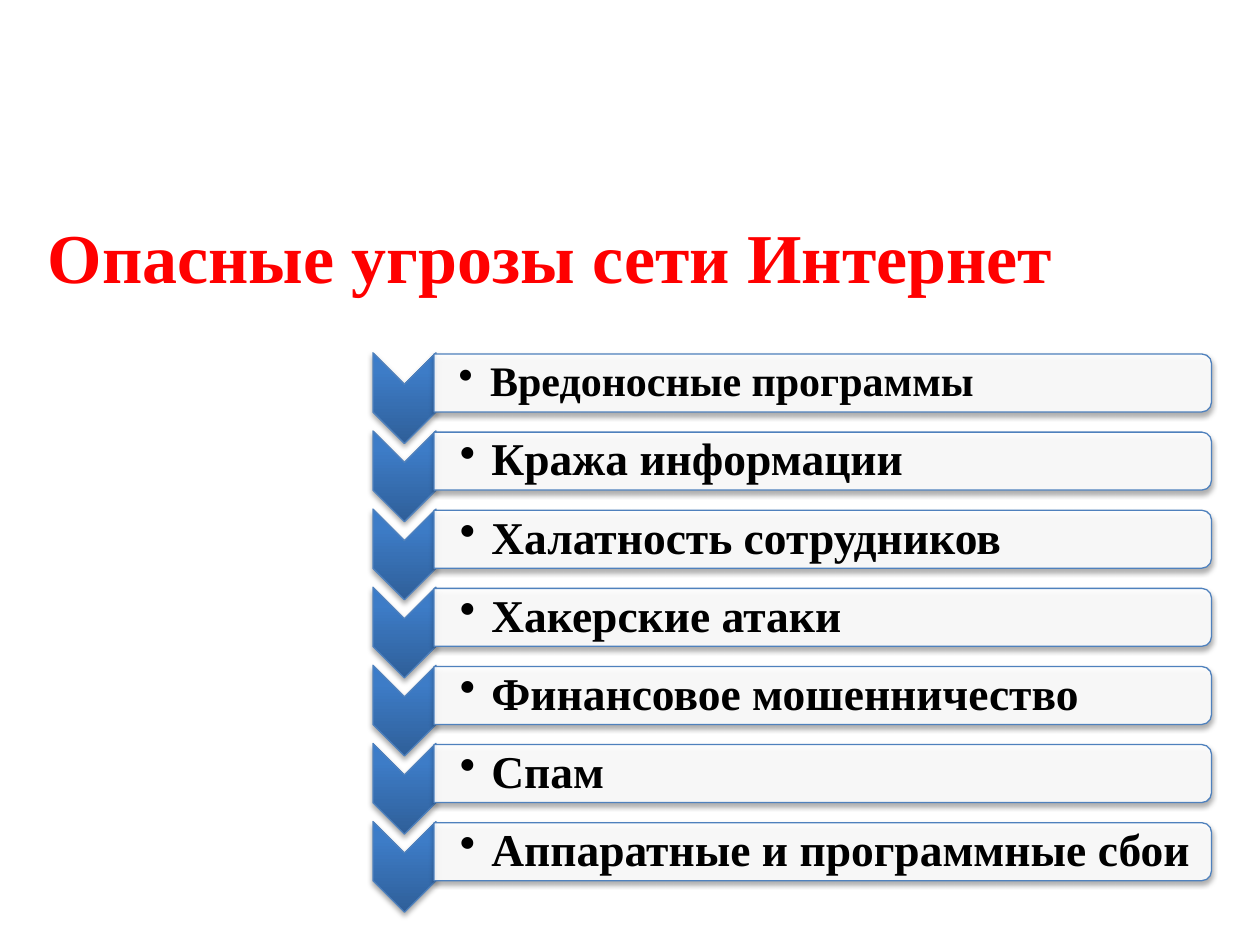
from lxml.etree import fromstring
from pptx import Presentation
from pptx.dml.color import RGBColor
from pptx.enum.shapes import MSO_SHAPE
from pptx.enum.text import MSO_ANCHOR, PP_ALIGN
from pptx.oxml.ns import nsdecls
from pptx.util import Inches, Pt

TITLE = "Опасные угрозы сети Интернет"
THREATS = [
    ("Вредоносные программы", 24),
    ("Кража информации", 26),
    ("Халатность сотрудников", 26),
    ("Хакерские атаки", 26),
    ("Финансовое мошенничество", 26),
    ("Спам", 26),
    ("Аппаратные и программные сбои", 26),
]
THEME = {
    "font": "Times New Roman",
    "title": "FF0000",
    "text": "000000",
    "line": "4F81BD",
    "bar": "FFFFFF",
    "grad": [(0, "2F5F99"), (80, "3D7CC7"), (100, "3A7CCB")],
    "head": 40,
}
PITCH = 0.62
ARROW = {"x": 3.21, "y": 3.16, "w": 0.72, "h": 0.5}
BAR = {"x": 6.53, "y": 3.04, "w": 0.46, "h": 6.17}
LABEL = {"x": 6.52, "y": 3.04, "w": 6.14, "h": 0.42}


def xml(tag, body, attrs=""):
    return fromstring(f"<a:{tag} {nsdecls('a')} {attrs}>{body}</a:{tag}>")


def assign(obj, values):
    for name, value in values.items():
        setattr(obj, name, value)


def style(font, size, color):
    assign(font, {"name": THEME["font"], "size": Pt(size), "bold": True})
    font.color.rgb = RGBColor.from_string(color)


def place(box, row):
    """Turn a centre and size into left, top, width and height for one row."""
    left = box["x"] - box["w"] / 2
    top = box["y"] - box["h"] / 2 + row * PITCH
    return [Inches(v) for v in (left, top, box["w"], box["h"])]


def turned(slide, kind, box, row):
    """Add a preset shape turned a quarter, with thin outline and soft shadow."""
    shape = slide.shapes.add_shape(kind, *place(box, row))
    shape.rotation = 90
    shape.line.color.rgb = RGBColor.from_string(THEME["line"])
    shape.line.width = Pt(0.75)
    shade = ('<a:outerShdw blurRad="40000" dist="23000" dir="5400000" rotWithShape="0">'
             '<a:srgbClr val="000000"><a:alpha val="35000"/></a:srgbClr></a:outerShdw>')
    shape._element.spPr.append(xml("effectLst", shade))
    return shape


def arrow(slide, row):
    shape = turned(slide, MSO_SHAPE.CHEVRON, ARROW, row)
    stops = "".join(f'<a:gs pos="{pos * 1000}"><a:srgbClr val="{color}"/></a:gs>'
                    for pos, color in THEME["grad"])
    body = f'<a:gsLst>{stops}</a:gsLst><a:lin ang="16200000" scaled="0"/>'
    shape._element.spPr.prstGeom.addnext(xml("gradFill", body, 'rotWithShape="0"'))


def bar(slide, row):
    shape = turned(slide, MSO_SHAPE.ROUND_2_SAME_RECTANGLE, BAR, row)
    shape.fill.solid()
    shape.fill.fore_color.rgb = RGBColor.from_string(THEME["bar"])
    tint = shape._element.spPr.find(".//{*}solidFill/{*}srgbClr")
    tint.append(xml("alpha", "", 'val="90000"'))


def label(slide, row, text, size):
    frame = slide.shapes.add_textbox(*place(LABEL, row)).text_frame
    edge = Inches(0.02)
    assign(frame, {
        "word_wrap": True, "vertical_anchor": MSO_ANCHOR.MIDDLE,
        "margin_left": Inches(0.19 if size < 26 else 0.2),
        "margin_right": edge, "margin_top": edge, "margin_bottom": edge,
    })
    para = frame.paragraphs[0]
    assign(para, {"level": 1, "line_spacing": 0.9, "alignment": PP_ALIGN.LEFT})
    props = para._p.get_or_add_pPr()
    props.set("marL", str(Inches(0.25)))
    props.set("indent", str(Inches(-0.25)))
    props.append(xml("spcAft", '<a:spcPct val="15000"/>'))
    props.append(xml("buChar", "", 'char="•"'))
    run = para.add_run()
    run.text = text
    style(run.font, size, THEME["text"])


def heading(slide):
    title = slide.shapes.title
    assign(title, {"left": Inches(-0.28), "top": Inches(1.62),
                   "width": Inches(9.29), "height": Inches(0.79)})
    frame = title.text_frame
    assign(frame, {"word_wrap": True, "vertical_anchor": MSO_ANCHOR.BOTTOM})
    para = frame.paragraphs[0]
    para.alignment = PP_ALIGN.CENTER
    run = para.add_run()
    run.text = TITLE
    style(run.font, THEME["head"], THEME["title"])


def main():
    deck = Presentation()
    assign(deck, {"slide_width": Inches(10), "slide_height": Inches(7.5)})
    slide = deck.slides.add_slide(deck.slide_layouts[5])
    heading(slide)
    for row, (text, size) in enumerate(THREATS):
        arrow(slide, row)
        bar(slide, row)
        label(slide, row, text, size)
    deck.save("out.pptx")


if __name__ == "__main__":
    main()
